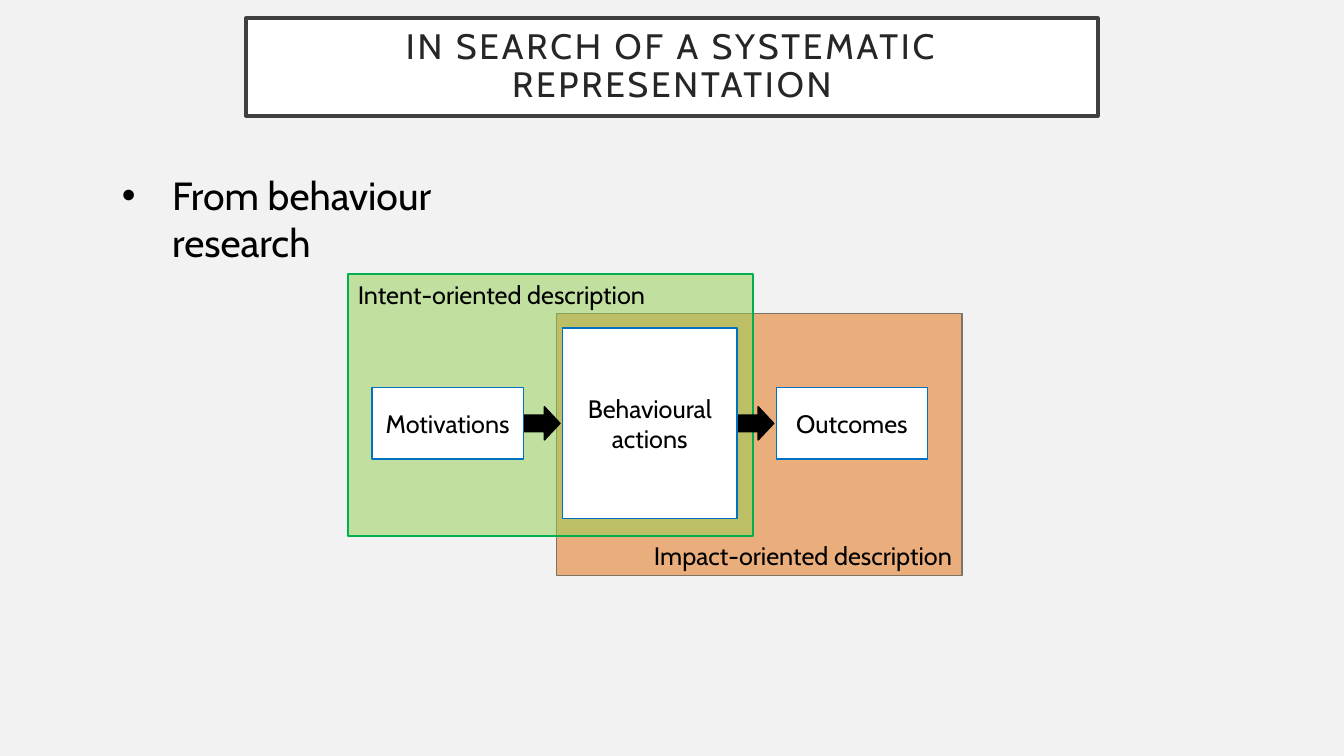
from pptx import Presentation
from pptx.dml.color import RGBColor
from pptx.enum import shapes, text
from pptx.oxml import ns
from pptx.util import Inches, Pt
from lxml import etree

BACKGROUND = RGBColor(0xF2, 0xF2, 0xF2)
WHITE = RGBColor(0xFF, 0xFF, 0xFF)
BLACK = RGBColor(0, 0, 0)
FRAME = RGBColor(0x40, 0x40, 0x40)
TITLE_INK = RGBColor(0x26, 0x26, 0x26)
ORANGE = RGBColor(0xE4, 0x6C, 0x0A)
TAUPE = RGBColor(0x7B, 0x73, 0x66)
LIME = RGBColor(0x92, 0xD0, 0x50)
GREEN = RGBColor(0x00, 0xB0, 0x50)
BLUE = RGBColor(0x00, 0x70, 0xC0)

TITLE = "IN SEARCH OF A SYSTEMATIC REPRESENTATION"
BULLET = "From behaviour research"
TOP, MIDDLE, BOTTOM = (text.MSO_ANCHOR.TOP, text.MSO_ANCHOR.MIDDLE,
                       text.MSO_ANCHOR.BOTTOM)
LEFT, CENTER, RIGHT = text.PP_ALIGN.LEFT, text.PP_ALIGN.CENTER, text.PP_ALIGN.RIGHT
RECTANGLE, ARROW = shapes.MSO_SHAPE.RECTANGLE, shapes.MSO_SHAPE.DOWN_ARROW

REGION_SIZE = (4.02, 2.6)
REGIONS = [
    ("Impact-oriented description", (5.52, 3.11), ORANGE, TAUPE, 50, BOTTOM, RIGHT),
    ("Intent-oriented description", (3.45, 2.72), LIME, GREEN, 51, TOP, LEFT),
]
ARROW_LEFTS = [7.33, 5.21]
STEPS = [
    ("Motivations", 3.69, (1.5, 0.71)),
    ("Outcomes", 7.7, (1.5, 0.71)),
    ("Behavioural actions", 5.58, (1.73, 1.89)),
]
FLOW_CENTER = 4.2


def apply(target, values):
    """Set each named attribute of the target."""
    for name, value in values.items():
        setattr(target, name, value)


def write(shape, words, size, color=BLACK, align=CENTER, anchor=MIDDLE, wrap=True):
    """Put one formatted paragraph in a shape and return it."""
    frame = shape.text_frame
    apply(frame, {"word_wrap": wrap, "vertical_anchor": anchor})
    paragraph = frame.paragraphs[0]
    paragraph.alignment = align
    run = paragraph.add_run()
    run.text = words
    apply(run.font, {"name": "Cabin", "size": Pt(size), "bold": False})
    run.font.color.rgb = color
    return paragraph


def paint(shape, fill, line, width=1):
    """Give a shape a solid fill and an outline."""
    shape.fill.solid()
    shape.fill.fore_color.rgb = fill
    shape.line.color.rgb = line
    shape.line.width = Pt(width)


def add_box(slide, kind, box, fill, line):
    """Add a flat preset shape at left, top, width, height."""
    shape = slide.shapes.add_shape(kind, *map(Inches, box))
    shape.shadow.inherit = False
    paint(shape, fill, line)
    return shape


def add_title(slide):
    """Format the framed title placeholder."""
    title = slide.shapes.title
    apply(title, {"left": Inches(2.44), "top": Inches(0.18),
                  "width": Inches(8.45), "height": Inches(0.97)})
    paint(title, WHITE, FRAME, 2.5)
    paragraph = write(title, TITLE, 25.2, TITLE_INK)
    paragraph.line_spacing = 0.9
    paragraph.runs[0].font._element.set("spc", "200")
    frame = title.text_frame
    frame.auto_size = text.MSO_AUTO_SIZE.NONE
    apply(frame, {f"margin_{side}": Inches(0.2)
                  for side in ("left", "top", "right", "bottom")})


def add_bullet(slide):
    """Add the bulleted line above the diagram."""
    box = slide.shapes.add_textbox(*map(Inches, (1.11, 1.65, 4.69, 0.57)))
    paragraph = write(box, BULLET, 28, align=LEFT, anchor=TOP, wrap=False)
    box.text_frame.auto_size = text.MSO_AUTO_SIZE.SHAPE_TO_FIT_TEXT
    properties = paragraph._p.get_or_add_pPr()
    properties.set("marL", str(Inches(0.5)))
    properties.set("indent", str(Inches(-0.5)))
    etree.SubElement(properties, ns.qn("a:buFont")).set("typeface", "Arial")
    etree.SubElement(properties, ns.qn("a:buChar")).set("char", "•")


def add_diagram(slide):
    """Add the two overlapping regions, the arrows and the three steps."""
    for words, corner, fill, line, opacity, anchor, align in REGIONS:
        region = add_box(slide, RECTANGLE, corner + REGION_SIZE, fill, line)
        color = region.fill._xPr.find(ns.qn("a:solidFill"))[0]
        etree.SubElement(color, ns.qn("a:alpha")).set("val", str(opacity * 1000))
        write(region, words, 18, align=align, anchor=anchor)
    for left in ARROW_LEFTS:
        arrow = add_box(slide, ARROW, (left, FLOW_CENTER - 0.18, 0.33, 0.36), BLACK, BLACK)
        arrow.rotation = 270
        arrow.adjustments[1] = 0.47
    for words, left, (width, height) in STEPS:
        top = FLOW_CENTER - height / 2
        step = add_box(slide, RECTANGLE, (left, top, width, height), WHITE, BLUE)
        write(step, words, 18)


def main():
    """Build and save the slide."""
    presentation = Presentation()
    apply(presentation, {"slide_width": Inches(13.33), "slide_height": Inches(7.5)})
    slide = presentation.slides.add_slide(presentation.slide_layouts[5])
    slide.background.fill.solid()
    slide.background.fill.fore_color.rgb = BACKGROUND
    add_title(slide)
    add_diagram(slide)
    add_bullet(slide)
    presentation.save("out.pptx")


if __name__ == "__main__":
    main()
